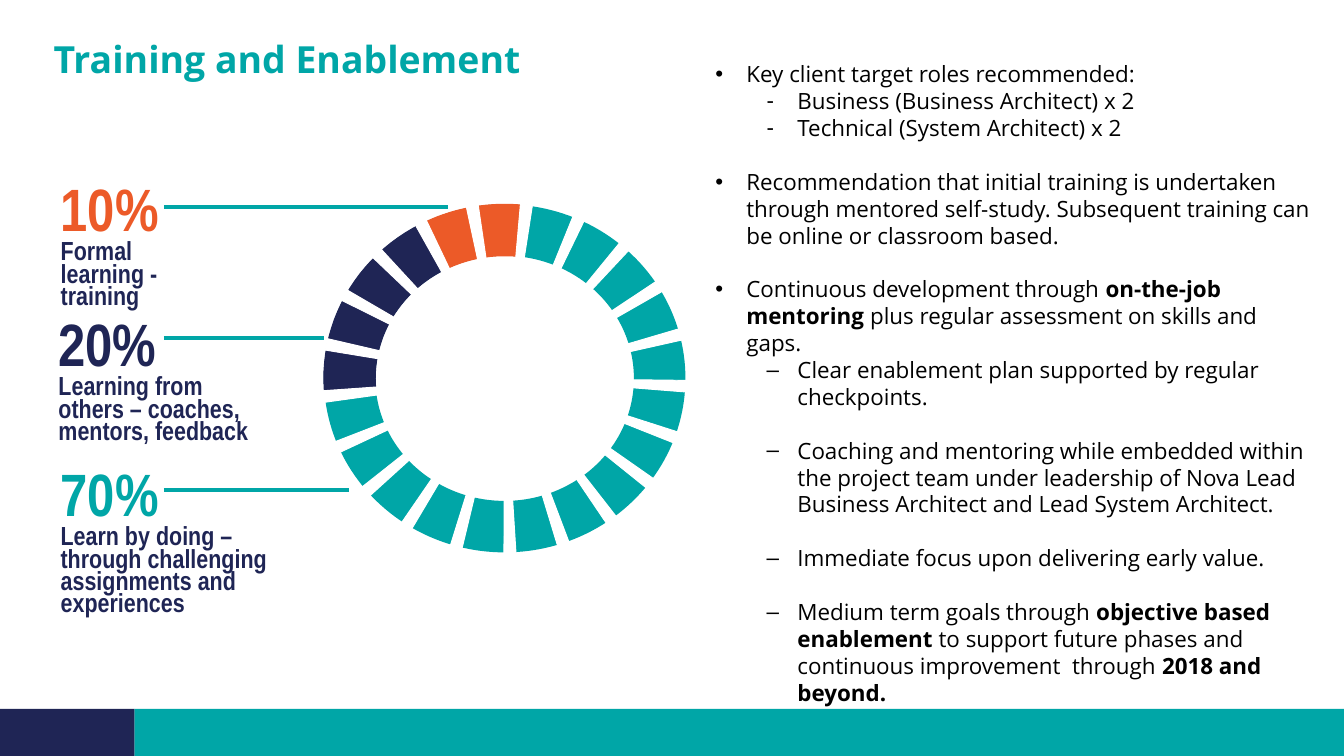
from dataclasses import dataclass
from math import cos, radians, sin

from lxml.etree import SubElement
from pptx import Presentation
from pptx.dml.color import RGBColor as Rgb
from pptx.enum.shapes import MSO_CONNECTOR as Connector, MSO_SHAPE as Shape
from pptx.enum.text import MSO_ANCHOR as Anchor
from pptx.oxml.ns import qn
from pptx.util import Emu, Inches, Pt


@dataclass(frozen=True)
class Theme:
    teal: Rgb = Rgb(0x00, 0xA6, 0xA7)
    navy: Rgb = Rgb(0x1F, 0x25, 0x55)
    orange: Rgb = Rgb(0xEC, 0x5A, 0x28)
    black: Rgb = Rgb(0, 0, 0)
    white: Rgb = Rgb(0xFF, 0xFF, 0xFF)
    text_font: str = "Open Sans"
    label_font: str = "Arial Narrow"
    title_size: int = 20
    body_size: int = 12
    share_size: int = 32
    label_size: int = 14


THEME = Theme()

# The page is a grid of 100 columns by 56.25 rows of square cells.
COLUMNS, ROWS = 100, 56.25
CELL = Inches(0.1)

# Ring measures, in cells; angles run clockwise from the right.
CENTER = (37.55, 28.15)
OUTER = (13.45, 12.95)
BAND = 3.83
INNER = (OUTER[0] - BAND, OUTER[1] - BAND)
SEGMENTS = 21
STEP = 360 / SEGMENTS
FIRST_GAP = 2.6

BLANK = 14.4

# Level, bullet, space before, spans of (text, bold)
POINTS = [
    (0, "•", 0, [("Key client target roles recommended:", False)]),
    (1, "-", 0, [("Business (Business Architect) x 2", False)]),
    (1, "-", 0, [("Technical (System Architect) x 2", False)]),
    (0, "•", BLANK, [("Recommendation that initial training is undertaken through mentored "
                      "self-study. Subsequent training can be online or classroom based.", False)]),
    (0, "•", BLANK, [("Continuous development through ", False),
                     ("on-the-job mentoring", True),
                     (" plus regular assessment on skills and gaps.", False)]),
    (1, "‒", 0, [("Clear enablement plan supported by regular checkpoints.", False)]),
    (1, "‒", BLANK, [("Coaching and mentoring while embedded within the project team under "
                      "leadership of Nova Lead Business Architect and Lead System Architect.", False)]),
    (1, "‒", BLANK, [("Immediate focus upon delivering early value.", False)]),
    (1, "‒", BLANK, [("Medium term goals through ", False),
                     ("objective based enablement", True),
                     (" to support future phases and continuous improvement  through ", False),
                     ("2018 and beyond.", True)]),
]

# Share, description, colour, box left, top and width, line row, line end
LABELS = [
    ("10%", "Formal learning - training", THEME.orange, 3.53, 12.3, 13.2, 15.4, 33.3),
    ("20%", "Learning from others – coaches, mentors, feedback",
     THEME.navy, 3.37, 22.35, 17.7, 25.15, 24.1),
    ("70%", "Learn by doing – through challenging assignments and experiences",
     THEME.teal, 3.53, 33.5, 17.7, 36.45, 26),
]


def cells(*counts):
    return [Emu(round(count * CELL)) for count in counts]


def paint(shape, color, outline=None):
    shape.shadow.inherit = False
    shape.fill.solid()
    shape.fill.fore_color.rgb = color
    if outline:
        shape.line.color.rgb = color
        shape.line.width = Pt(outline)
    else:
        shape.line.fill.background()


def add_preset(page, kind, place, color):
    shape = page.shapes.add_shape(kind, *cells(*place))
    paint(shape, color)
    return shape


def add_text_box(page, place, insets, anchor=Anchor.TOP):
    """Return the text frame of a new box; insets are (sides, top and bottom)."""
    frame = page.shapes.add_textbox(*cells(*place)).text_frame
    frame.word_wrap = True
    frame.vertical_anchor = anchor
    frame.margin_left = frame.margin_right = Inches(insets[0])
    frame.margin_top = frame.margin_bottom = Inches(insets[1])
    return frame


def add_span(para, text, font, size, color, bold=True):
    span = para.add_run()
    span.text = text
    span.font.name = font
    span.font.size = Pt(size)
    span.font.color.rgb = color
    span.font.bold = bold


def set_bullet(para, character, indent):
    props = para._p.get_or_add_pPr()
    props.set("marL", str(Inches(indent)))
    props.set("indent", str(Inches(-0.23)))
    SubElement(props, qn("a:buFont")).set("typeface", "Arial")
    SubElement(props, qn("a:buChar")).set("char", character)


def ring_point(radii, degrees):
    angle = radians(degrees)
    return tuple(cells(CENTER[0] + radii[0] * cos(angle),
                       CENTER[1] + radii[1] * sin(angle)))


def add_outline(page, points, color):
    builder = page.shapes.build_freeform(*points[0], scale=1.0)
    builder.add_line_segments(points[1:], close=True)
    paint(builder.convert_to_shape(), color, outline=0.5)


def add_arc(page, first_gap, last_gap, color):
    """Colour the ring from one gap to another."""
    start = FIRST_GAP + first_gap * STEP
    sweep = (last_gap - first_gap) * STEP
    angles = [start + sweep * part / 24 for part in range(25)]
    points = [ring_point(OUTER, angle) for angle in angles]
    points += [ring_point(INNER, angle) for angle in reversed(angles)]
    add_outline(page, points, color)


def add_gap(page, number):
    middle = FIRST_GAP + number * STEP
    edge = [radius + 0.1 for radius in OUTER]
    hole = [radius - 0.1 for radius in INNER]
    corners = ((hole, -1.9), (edge, -1.9), (edge, 1.9), (hole, 1.9))
    add_outline(page, [ring_point(radii, middle + turn) for radii, turn in corners], THEME.white)


def add_ring(page):
    place = (CENTER[0] - OUTER[0], CENTER[1] - OUTER[1], 2 * OUTER[0], 2 * OUTER[1])
    ring = add_preset(page, Shape.DONUT, place, THEME.teal)
    ring.adjustments[0] = BAND / (2 * OUTER[1])
    add_arc(page, 10, 14, THEME.navy)
    add_arc(page, 14, 16, THEME.orange)
    for number in range(SEGMENTS):
        add_gap(page, number)


def add_leader(page, row, end):
    line = page.shapes.add_connector(Connector.STRAIGHT, *cells(12.2, row, end, row))
    line.line.color.rgb = THEME.teal
    line.line.width = Pt(2.25)
    SubElement(line._element.spPr, qn("a:effectLst"))


def add_label(page, share, description, color, left, top, width):
    frame = add_text_box(page, (left, top, width, 10.6), (0.1, 0.05))
    add_span(frame.paragraphs[0], share, THEME.label_font, THEME.share_size, color)
    para = frame.add_paragraph()
    para.line_spacing = Pt(12)
    add_span(para, description, THEME.label_font, THEME.label_size, THEME.navy)


def add_title(page, text):
    para = add_text_box(page, (4, 1.9, 92, 4.2), (0, 0), Anchor.BOTTOM).paragraphs[0]
    para.line_spacing = 0.9
    add_span(para, text, THEME.text_font, THEME.title_size, THEME.teal)


def add_points(page):
    frame = add_text_box(page, (52.53, 4.1, 45.8, 48.5), (0.07, 0.04))
    for number, (level, bullet, before, spans) in enumerate(POINTS):
        para = frame.add_paragraph() if number else frame.paragraphs[0]
        para.level = level
        para.line_spacing = 1.0
        para.space_before = Pt(before)
        set_bullet(para, bullet, 0.61 if level else 0.23)
        for text, bold in spans:
            add_span(para, text, THEME.text_font, THEME.body_size, THEME.black, bold)


def main():
    deck = Presentation()
    deck.slide_width, deck.slide_height = cells(COLUMNS, ROWS)
    page = deck.slides.add_slide(deck.slide_layouts[6])
    add_preset(page, Shape.RECTANGLE, (10, 52.75, 90, 3.5), THEME.teal)
    add_preset(page, Shape.RECTANGLE, (0, 52.75, 10, 3.5), THEME.navy)
    add_title(page, "Training and Enablement")
    add_points(page)
    add_ring(page)
    for share, description, color, left, top, width, row, end in LABELS:
        add_leader(page, row, end)
        add_label(page, share, description, color, left, top, width)
    deck.save("out.pptx")


if __name__ == "__main__":
    main()
